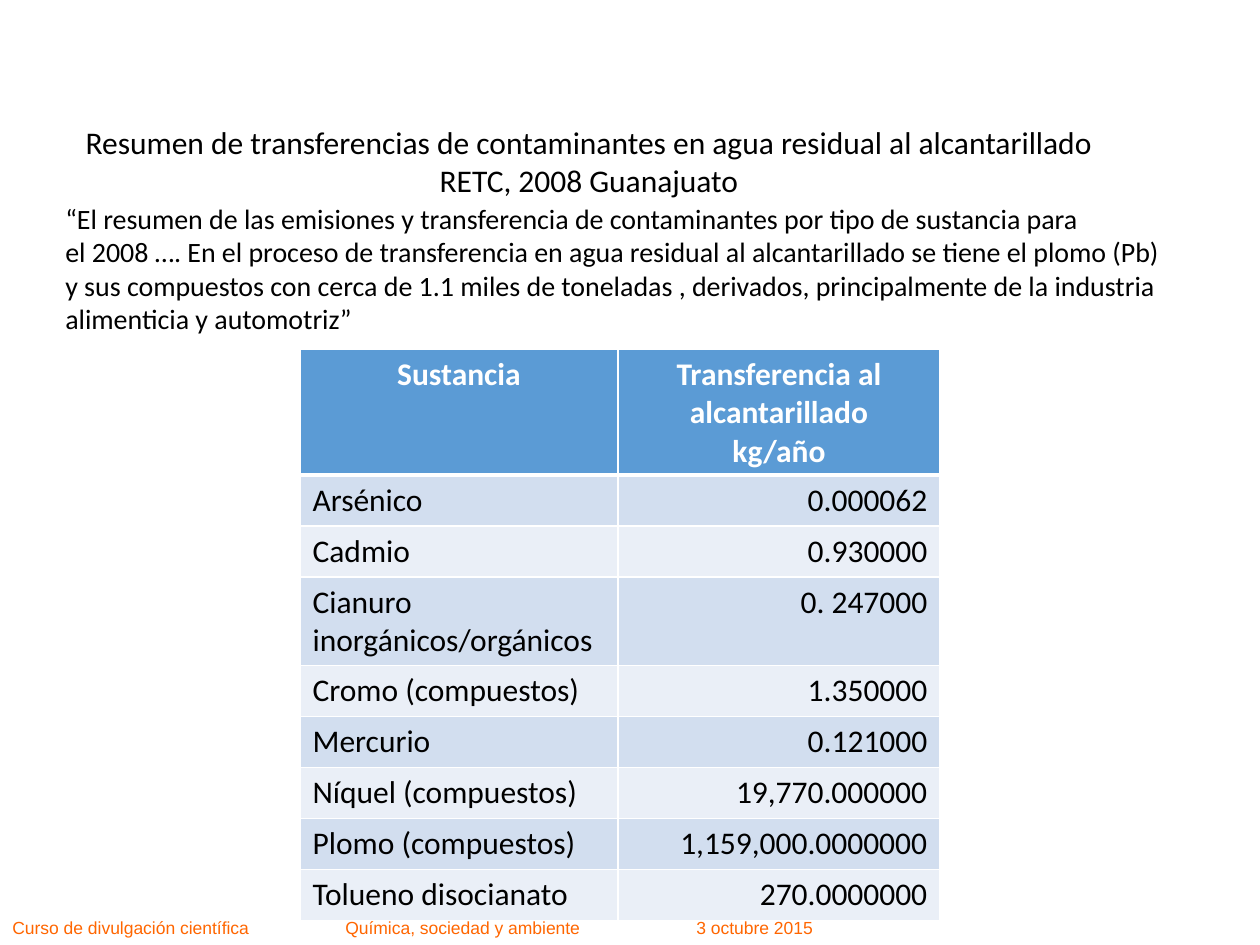
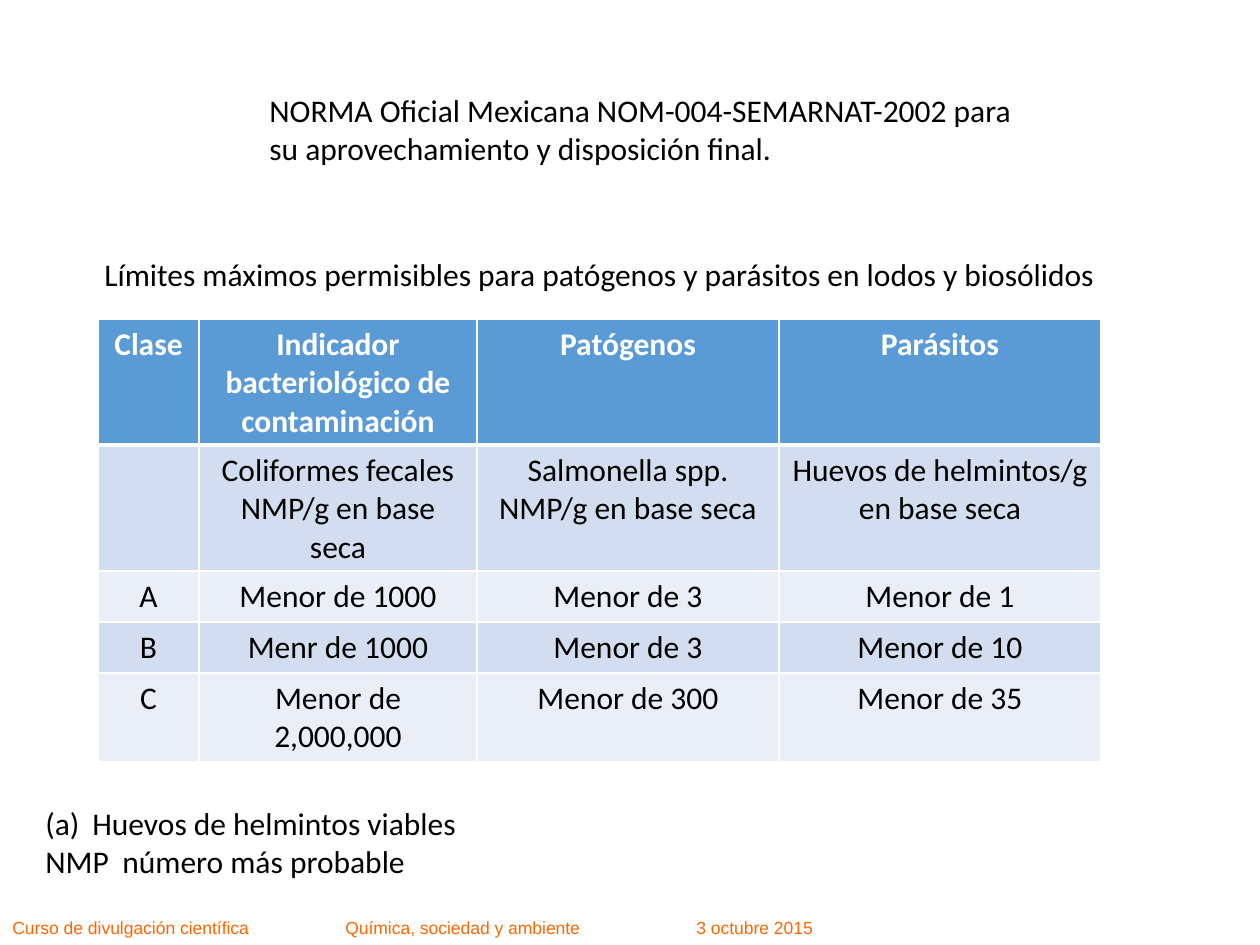
from lxml.etree import SubElement
from pptx import Presentation
from pptx.dml.color import RGBColor
from pptx.enum.text import PP_ALIGN as Align
from pptx.oxml.ns import qn
from pptx.util import Emu, Pt

SCALE = 914400 / 126
PAGE_SIZE = (1260, 945)
BLACK = RGBColor(0x00, 0x00, 0x00)
WHITE = RGBColor(0xFF, 0xFF, 0xFF)
ORANGE = RGBColor(0xFF, 0x66, 0x00)
HEADER_BLUE = RGBColor(0x5B, 0x9B, 0xD5)
BANDS = (RGBColor(0xD2, 0xDE, 0xEF), RGBColor(0xEA, 0xEF, 0xF7))

LINE_HEIGHT = 37
CELL_PADDING = 14

SUBSTANCES = [
    ("Sustancia", "Transferencia al alcantarillado\nkg/año"),
    ("Arsénico", "0.000062"),
    ("Cadmio", "0.930000"),
    ("Cianuro inorgánicos/orgánicos", "0. 247000"),
    ("Cromo (compuestos)", "1.350000"),
    ("Mercurio", "0.121000"),
    ("Níquel (compuestos)", "19,770.000000"),
    ("Plomo (compuestos)", "1,159,000.0000000"),
    ("Tolueno disocianato", "270.0000000"),
]
LIMITS = [
    ("Clase", "Indicador bacteriológico de contaminación", "Patógenos", "Parásitos"),
    ("", "Coliformes fecales\nNMP/g en base seca", "Salmonella spp.\nNMP/g en base seca",
     "Huevos de helmintos/g en base seca"),
    ("A", "Menor de 1000", "Menor de 3", "Menor de 1"),
    ("B", "Menr de 1000", "Menor de 3", "Menor de 10"),
    ("C", "Menor de 2,000,000", "Menor de 300", "Menor de 35"),
]


def px(length):
    return Emu(round(length * SCALE))


def write(frame, text, size=18, color=BLACK, font="Calibri", bold=False, align=Align.LEFT):
    for index, line in enumerate(text.split("\n")):
        para = frame.paragraphs[0] if index == 0 else frame.add_paragraph()
        para.alignment = align
        span = para.add_run()
        span.text = line
        span.font.size = Pt(size)
        span.font.name = font
        span.font.bold = bold
        span.font.color.rgb = color


def add_text(page, box, text, wrap=True, **style):
    left, top, width, height = map(px, box)
    frame = page.shapes.add_textbox(left, top, width, height).text_frame
    frame.word_wrap = wrap
    write(frame, text, **style)
    return frame


def set_tabs(para, stops):
    tabs = SubElement(para._p.get_or_add_pPr(), qn("a:tabLst"))
    for stop in stops:
        SubElement(tabs, qn("a:tab"), pos=str(px(stop)), algn="l")


def number_with_letter(para, indent):
    properties = para._p.get_or_add_pPr()
    properties.set("marL", str(px(indent)))
    properties.set("indent", str(-px(indent)))
    SubElement(properties, qn("a:buFont"), typeface="+mj-lt")
    SubElement(properties, qn("a:buAutoNum"), type="alphaLcParenBoth")


def set_borders(cell, top, bottom):
    properties = cell._tc.get_or_add_tcPr()
    for side, weight in (("L", 1), ("R", 1), ("T", top), ("B", bottom)):
        line = SubElement(properties, qn(f"a:ln{side}"), w=str(Pt(weight)))
        fill = SubElement(line, qn("a:solidFill"))
        SubElement(fill, qn("a:srgbClr"), val=str(WHITE))


def add_banded_table(page, left, top, widths, line_counts, rows, aligns):
    heights = [LINE_HEIGHT * count + CELL_PADDING for count in line_counts]
    table = page.shapes.add_table(
        len(rows), len(widths), px(left), px(top), px(sum(widths)), px(sum(heights))).table
    for column, width in zip(table.columns, widths):
        column.width = px(width)
    for row_index, (row, height, texts) in enumerate(zip(table.rows, heights, rows)):
        row.height = px(height)
        header = row_index == 0
        for cell, text, align in zip(row.cells, texts, aligns):
            set_borders(cell, 3 if row_index == 1 else 1, 3 if header else 1)
            cell.fill.solid()
            cell.fill.fore_color.rgb = HEADER_BLUE if header else BANDS[(row_index - 1) % 2]
            if text:
                write(cell.text_frame, text, color=WHITE if header else BLACK,
                      bold=header, align=Align.CENTER if header else align)


def add_page(deck):
    page = deck.slides.add_slide(deck.slide_layouts[6])
    footer = add_text(
        page, (0, 911, 930, 34),
        "Curso de divulgación científica\tQuímica, sociedad y ambiente\t3 octubre 2015",
        size=10, color=ORANGE, font="Arial")
    set_tabs(footer.paragraphs[0], (333, 684))
    return page


def build_transfers(deck):
    page = add_page(deck)
    add_banded_table(page, 300, 349, (318, 322), (3, 1, 1, 2, 1, 1, 1, 1, 1),
                     SUBSTANCES, (Align.LEFT, Align.RIGHT))
    add_text(page, (67, 117, 1044, 89),
             "Resumen de transferencias de contaminantes en agua residual al alcantarillado\n"
             "RETC, 2008 Guanajuato", wrap=False, align=Align.CENTER)
    add_text(page, (53, 195, 1134, 152),
             "“El resumen de las emisiones y transferencia de contaminantes por tipo de "
             "sustancia para\n"
             "el 2008 …. En el proceso de transferencia en agua residual al alcantarillado se "
             "tiene el plomo (Pb) y sus compuestos con cerca de 1.1 miles de toneladas , "
             "derivados, principalmente de la industria alimenticia y automotriz”", size=16)


def build_limits(deck):
    page = add_page(deck)
    add_text(page, (257, 85, 771, 89),
             "NORMA Oficial Mexicana NOM-004-SEMARNAT-2002 para su aprovechamiento y "
             "disposición final.")
    add_banded_table(page, 98, 319, (101, 278, 302, 322), (3, 3, 1, 1, 2),
                     LIMITS, (Align.CENTER,) * 4)
    add_text(page, (92, 249, 1027, 50),
             "Límites máximos permisibles para patógenos y parásitos en lodos y biosólidos",
             wrap=False)
    notes = add_text(page, (33, 798, 441, 89),
                     "Huevos de helmintos viables\nNMP\tnúmero más probable", wrap=False)
    number_with_letter(notes.paragraphs[0], 47)
    set_tabs(notes.paragraphs[1], (77,))


def main():
    deck = Presentation()
    deck.slide_width, deck.slide_height = map(px, PAGE_SIZE)
    build_transfers(deck)
    build_limits(deck)
    deck.save("out.pptx")


if __name__ == "__main__":
    main()
